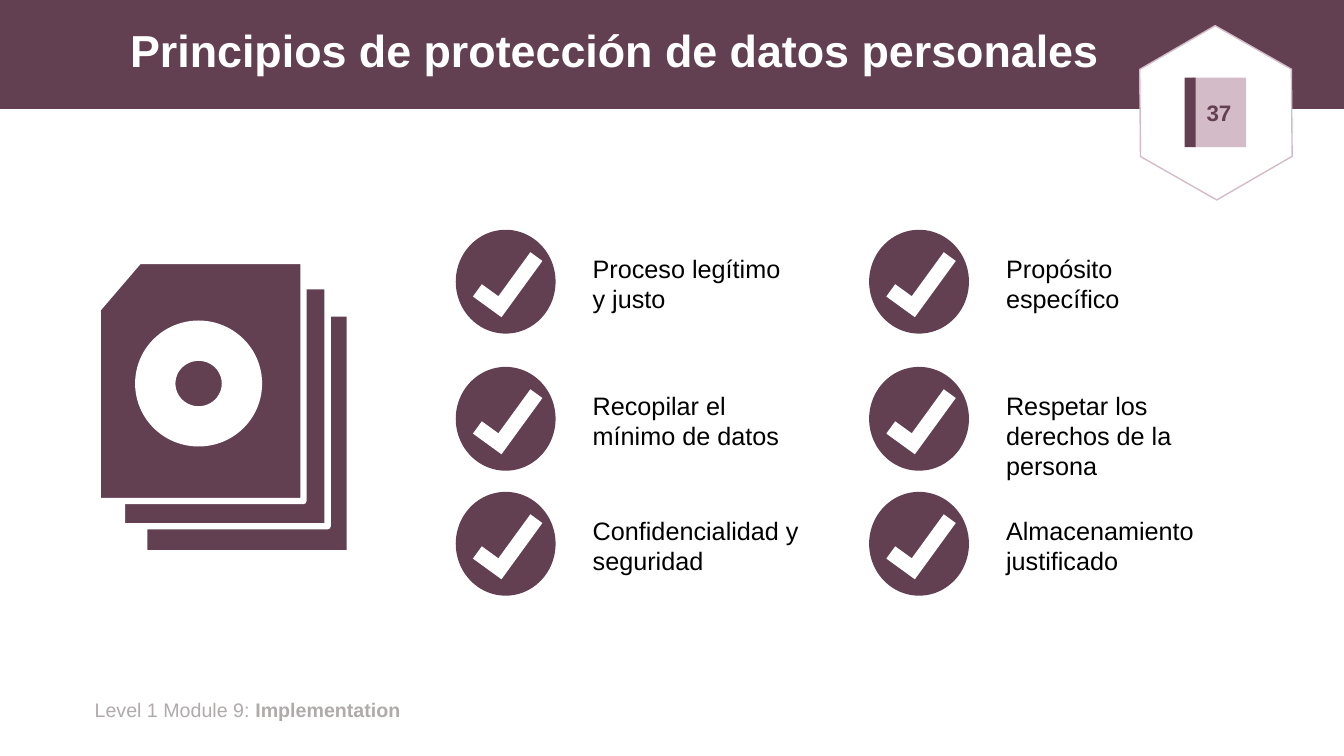
import pptx
import pptx.dml.color
import pptx.enum.shapes
import pptx.enum.text
import pptx.oxml.ns
import pptx.util

Inches = pptx.util.Inches
Pt = pptx.util.Pt
SHAPE = pptx.enum.shapes.MSO_SHAPE
ALIGN = pptx.enum.text.PP_ALIGN
ANCHOR = pptx.enum.text.MSO_ANCHOR

PLUM = "633F52"
ROSE = "D4BBC8"
WHITE = "FFFFFF"
GREY = "AFABAB"

PRINCIPLES = [
    ["Proceso legítimo y justo", "Propósito específico"],
    ["Recopilar el mínimo de datos", "Respetar los derechos de la persona"],
    ["Confidencialidad y seguridad", "Almacenamiento justificado"],
]


def color(hex_string):
    """Turn a hex string into a colour."""
    return pptx.dml.color.RGBColor.from_string(hex_string)


def add_part(parent, kind, box, fill, line=None, width=1, rotation=0, adjust=()):
    """Add a preset shape without shadow, its box given in inches."""
    part = parent.shapes.add_shape(kind, *map(Inches, box))
    part.shadow.inherit = False
    part.fill.solid()
    part.fill.fore_color.rgb = color(fill)
    if line:
        part.line.color.rgb = color(line)
        part.line.width = Pt(width)
    else:
        part.line.fill.background()
    part.rotation = rotation
    for index, value in enumerate(adjust):
        part.adjustments[index] = value
    return part


def write(holder, text, size=18, ink="000000", bold=False, bold_tail="",
          align=ALIGN.LEFT, anchor=ANCHOR.TOP, spacing=None, wrap=True):
    """Write one paragraph, with an optional bold ending."""
    frame = holder.text_frame
    frame.word_wrap = wrap
    frame.vertical_anchor = anchor
    paragraph = frame.paragraphs[0]
    paragraph.alignment = align
    paragraph.line_spacing = spacing
    for words, heavy in ((text, bold), (bold_tail, True)):
        if words:
            run = paragraph.add_run()
            run.text = words
            run.font.name = "Arial"
            run.font.size = Pt(size)
            run.font.bold = heavy
            run.font.color.rgb = color(ink)


def add_text(slide, box, text, **style):
    """Add a text box, its box given in inches."""
    write(slide.shapes.add_textbox(*map(Inches, box)), text, **style)


def add_header(slide, left, top, width):
    """Draw the title band."""
    add_part(slide, SHAPE.RECTANGLE, (left, top, width, 1.08), PLUM)
    add_text(slide, (left + 0.35, top + 0.05, 11.5, 0.95),
             "Principios de protección de datos personales", size=32, ink=WHITE,
             bold=True, align=ALIGN.CENTER, anchor=ANCHOR.MIDDLE, spacing=0.9)


def add_disc_stack(slide, left, top):
    """Draw three stacked cards with a disc on the front one."""
    stack = slide.shapes.add_group_shape()
    for across, down in ((0.46, 0.52), (0.24, 0.25), (0, 0)):
        add_part(stack, SHAPE.FLOWCHART_CARD, (left + across, top + down, 2.04, 2.38),
                 PLUM, line=WHITE, width=4.5)
    add_part(stack, SHAPE.DONUT, (left + 0.37, top + 0.59, 1.26, 1.25), WHITE,
             adjust=[0.32])


def add_principle(slide, left, top, text):
    """Draw a check mark in a disc with its principle beside it."""
    check = slide.shapes.add_group_shape()
    add_part(check, SHAPE.OVAL, (left, top, 0.99, 1.03), PLUM)
    tick = add_part(check, SHAPE.HALF_FRAME, (left + 0.17, top + 0.31, 0.69, 0.35),
                    WHITE, rotation=306, adjust=[0.42, 0.43])
    geometry = tick._element.spPr.find(pptx.oxml.ns.qn("a:prstGeom"))
    geometry.set("prst", "corner")
    add_text(slide, (left + 1.26, top + 0.18, 2.25, 0.71), text)


def add_principles(slide, left, top):
    """Lay out the principles in two columns."""
    for row, drop in zip(PRINCIPLES, (0, 1.36, 2.6)):
        for column, text in enumerate(row):
            add_principle(slide, left + column * 4.1, top + drop, text)


def add_page_badge(slide, left, top):
    """Draw the hexagon with the page number."""
    badge = slide.shapes.add_group_shape()
    add_part(badge, SHAPE.HEXAGON, (left, top, 1.74, 1.5), WHITE, line=ROSE,
             rotation=29.7, adjust=[0.29, 1.15])
    number = add_part(badge, SHAPE.RECTANGLE, (left + 0.63, top + 0.4, 0.54, 0.69), ROSE)
    write(number, "37", size=16, ink=PLUM, bold=True, align=ALIGN.CENTER,
          anchor=ANCHOR.MIDDLE, wrap=False)
    add_part(badge, SHAPE.RECTANGLE, (left + 0.56, top + 0.4, 0.11, 0.69), PLUM)


def main():
    """Build the slide and save it."""
    deck = pptx.Presentation()
    deck.slide_width = Inches(13.33)
    deck.slide_height = Inches(7.5)
    slide = deck.slides.add_slide(deck.slide_layouts[6])
    add_header(slide, 0, 0, 13.33)
    add_text(slide, (0.84, 6.87, 4.55, 0.34), "Level 1 Module 9: ", size=14, ink=GREY,
             bold_tail="Implementation")
    add_disc_stack(slide, 0.97, 2.59)
    add_principles(slide, 4.52, 2.28)
    add_page_badge(slide, 11.19, 0.37)
    deck.save("out.pptx")


if __name__ == "__main__":
    main()
